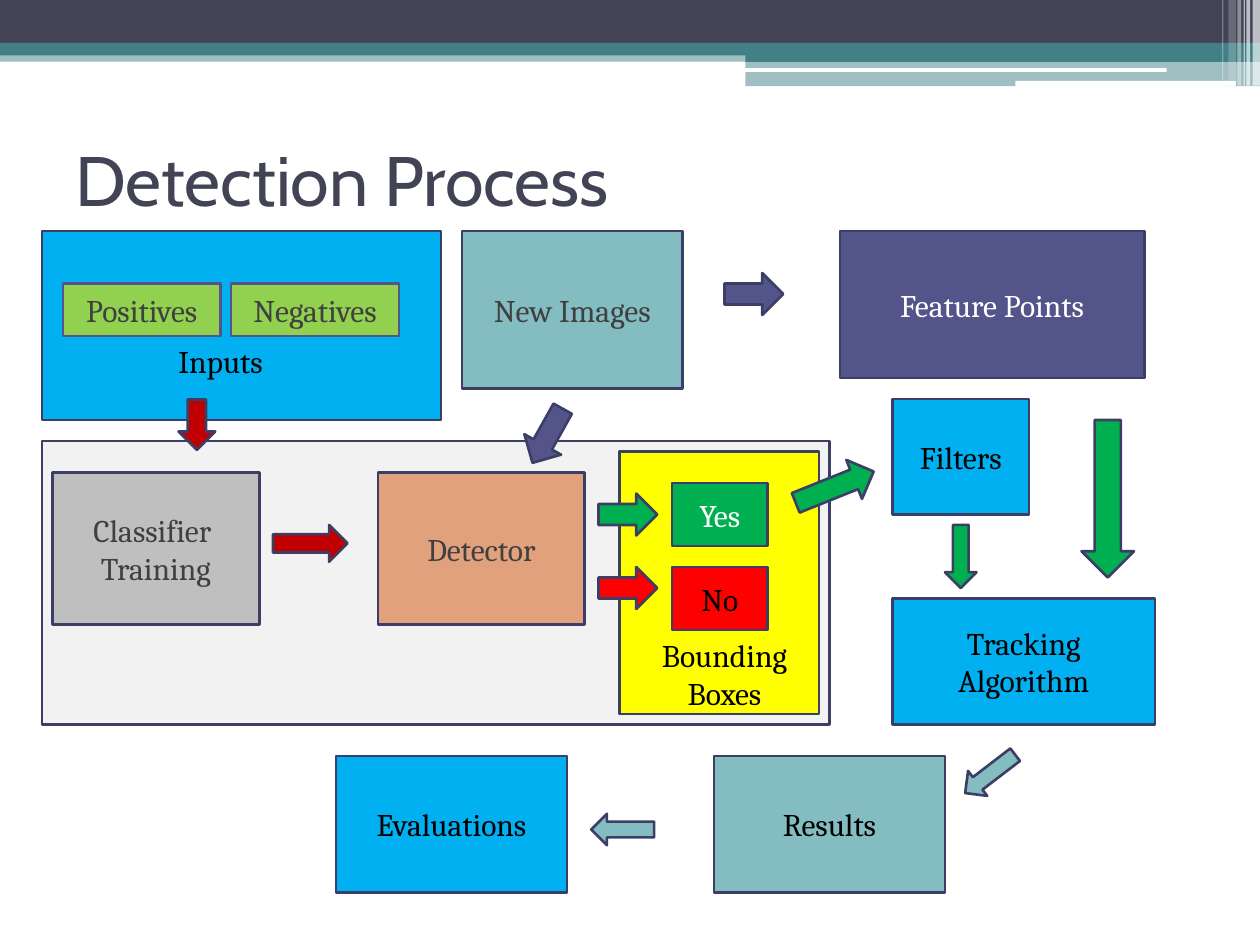
import dataclasses
import typing

import lxml.etree
import pptx
import pptx.dml.color
import pptx.enum.shapes
import pptx.enum.text
import pptx.oxml.ns
import pptx.util

KIND = pptx.enum.shapes.MSO_SHAPE
ALIGN = pptx.enum.text.PP_ALIGN
ANCHOR = pptx.enum.text.MSO_ANCHOR
COLS, ROWS = 120, 90
WIDE, HIGH = pptx.util.Inches(10), pptx.util.Inches(7.5)


@dataclasses.dataclass(frozen=True)
class Theme:
    head: str = "Cabin"
    body: str = "Cambria"
    big: int = 40
    small: int = 18
    edge: float = 1.5
    navy: str = "424456"
    teal: str = "438086"
    white: str = "FFFFFF"
    black: str = "000000"
    gray: str = "404040"
    rim: str = "3D3E66"
    violet: str = "53548A"
    blue: str = "00B0F0"
    lime: str = "92D050"
    green: str = "00B050"
    red: str = "FF0000"
    dark: str = "C00000"
    aqua: str = "83BCC1"
    tan: str = "E1A17C"
    silver: str = "BFBFBF"
    pale: str = "F2F2F2"
    yellow: str = "FFFF00"


T = Theme()


class Area(typing.NamedTuple):
    """Left, top, width and height in grid columns and rows."""
    x: float
    y: float
    w: float
    h: float


class Bar(typing.NamedTuple):
    area: Area
    fill: str
    alpha: int = 100
    kind: typing.Any = KIND.RECTANGLE


class Box(typing.NamedTuple):
    area: Area
    fill: str
    text: str = ""
    ink: str = T.black
    rim: str = T.rim
    kind: typing.Any = KIND.RECTANGLE


class Arrow(typing.NamedTuple):
    area: Area
    fill: str
    turn: float = 0


class Label(typing.NamedTuple):
    area: Area
    text: str
    ink: str = T.black
    font: str = T.body
    size: int = T.small
    align: typing.Any = ALIGN.CENTER
    anchor: typing.Any = ANCHOR.TOP


BARS = [
    Bar(Area(0, 4.8, COLS, 1.08), T.teal, 50),
    Bar(Area(0, 0, COLS, 4.08), T.navy),
    Bar(Area(0, 4.08, COLS, 1.2), T.teal),
    Bar(Area(71, 4.7, 49, 1.2), T.teal),
    Bar(Area(71, 5.8, 49, 2.4), T.teal, 50),
    Bar(Area(70.9, 6.5, 40.2, 0.36), T.white, kind=KIND.ROUNDED_RECTANGLE),
    Bar(Area(96.7, 7.7, 21, 0.48), T.white, kind=KIND.ROUNDED_RECTANGLE),
] + [
    Bar(Area(x, 0, w, h), T.white, alpha)
    for x, w, h, alpha in [
        (119.3, 0.7, 8.16, 65), (118.7, 0.36, 8.16, 65),
        (118.45, 0.12, 8.16, 60), (117.85, 0.36, 8.16, 40),
        (117, 0.72, 7.68, 20), (116.4, 0.12, 7.68, 30)]
]

BOXES = [
    Box(Area(4, 42, 75, 27), T.pale, kind=KIND.FLOWCHART_PROCESS),
    Box(Area(59, 43, 19, 25), T.yellow),
    Box(Area(4, 22, 38, 18), T.blue, kind=KIND.FLOWCHART_PROCESS),
    Box(Area(6, 27, 15, 5), T.lime, "Positives", T.gray, T.violet),
    Box(Area(22, 27, 16, 5), T.lime, "Negatives", T.gray, T.violet),
    Box(Area(5, 45, 19.7, 14.5), T.silver, "Classifier \nTraining", T.gray),
    Box(Area(36, 45, 19.7, 14.5), T.tan, "Detector", T.gray),
    Box(Area(44, 22, 21, 15), T.aqua, "New Images", T.gray),
    Box(Area(64, 46, 9.1, 6), T.green, "Yes", T.white),
    Box(Area(64, 54, 9.1, 6), T.red, "No"),
    Box(Area(85, 38, 13, 11), T.blue, "Filters"),
    Box(Area(80, 22, 29, 14), T.violet, "Feature Points", T.white),
    Box(Area(85, 57, 25, 12), T.blue, "Tracking Algorithm"),
    Box(Area(68, 72, 22, 13), T.aqua, "Results"),
    Box(Area(32, 72, 22, 13), T.blue, "Evaluations"),
]

ARROWS = [
    Arrow(Area(26, 50, 7.1, 3.5), T.dark),
    Arrow(Area(16.35, 38.7, 4.8, 3.5), T.dark, 90),
    Arrow(Area(57, 47, 5.6, 4), T.green),
    Arrow(Area(57, 54, 5.6, 4), T.red),
    Arrow(Area(49.2, 39.5, 5.9, 4), T.violet, 119.2),
    Arrow(Area(75.5, 44.4, 8, 4), T.green, 338.1),
    Arrow(Area(69, 26, 5.6, 4), T.violet),
    Arrow(Area(98, 45, 15, 5), T.green, 90),
    Arrow(Area(88.5, 51.5, 6, 3), T.green, 90),
    Arrow(Area(91.3, 72.2, 6, 3), T.aqua, 142.5),
    Arrow(Area(56.3, 77.5, 6, 3), T.aqua, 180),
]

LABELS = [
    Label(Area(6, 10, 108, 14), "Detection Process", T.navy, T.head, T.big,
          ALIGN.LEFT, ANCHOR.MIDDLE),
    Label(Area(61, 60, 16, 8.5), "Bounding Boxes"),
    Label(Area(13, 32, 16, 4.8), "Inputs"),
]


def tone(code: str) -> pptx.dml.color.RGBColor:
    return pptx.dml.color.RGBColor.from_string(code)


def place(area: Area) -> list[int]:
    """Turn grid units into slide lengths."""
    return [round(part * full / count) for part, full, count in zip(
        area, (WIDE, HIGH) * 2, (COLS, ROWS) * 2)]


def adorn(item: typing.Any, look: dict[str, typing.Any]) -> None:
    for name, value in look.items():
        setattr(item, name, value)


def write(frame: typing.Any, label: Label) -> None:
    adorn(frame, {"text": label.text, "word_wrap": True,
                  "vertical_anchor": label.anchor})
    for para in frame.paragraphs:
        para.alignment = label.align
        adorn(para.font, {"name": label.font,
                          "size": pptx.util.Pt(label.size)})
        para.font.color.rgb = tone(label.ink)


def draw(slide: typing.Any, kind: typing.Any, area: Area, fill: str,
         rim: str = "") -> typing.Any:
    """Add a flat shape, outlined only when a rim colour is given."""
    shape = slide.shapes.add_shape(kind, *place(area))
    shape.shadow.inherit = False
    shape.fill.solid()
    shape.fill.fore_color.rgb = tone(fill)
    if rim:
        shape.line.color.rgb = tone(rim)
        shape.line.width = pptx.util.Pt(T.edge)
    else:
        shape.line.fill.background()
    return shape


def fade(shape: typing.Any, alpha: int) -> None:
    qn = pptx.oxml.ns.qn
    color = shape.element.spPr.find(qn("a:solidFill")).find(qn("a:srgbClr"))
    lxml.etree.SubElement(color, qn("a:alpha"), val=str(alpha * 1000))


def main() -> None:
    deck = pptx.Presentation()
    adorn(deck, {"slide_width": WIDE, "slide_height": HIGH})
    slide = deck.slides.add_slide(deck.slide_layouts[6])
    for bar in BARS:
        shape = draw(slide, bar.kind, bar.area, bar.fill)
        if bar.alpha < 100:
            fade(shape, bar.alpha)
    for box in BOXES:
        shape = draw(slide, box.kind, box.area, box.fill, box.rim)
        if box.text:
            write(shape.text_frame, Label(box.area, box.text, box.ink,
                                          anchor=ANCHOR.MIDDLE))
    for arrow in ARROWS:
        shape = draw(slide, KIND.RIGHT_ARROW, arrow.area, arrow.fill, T.rim)
        shape.rotation = arrow.turn
    for label in LABELS:
        write(slide.shapes.add_textbox(*place(label.area)).text_frame, label)
    deck.save("out.pptx")


if __name__ == "__main__":
    main()
